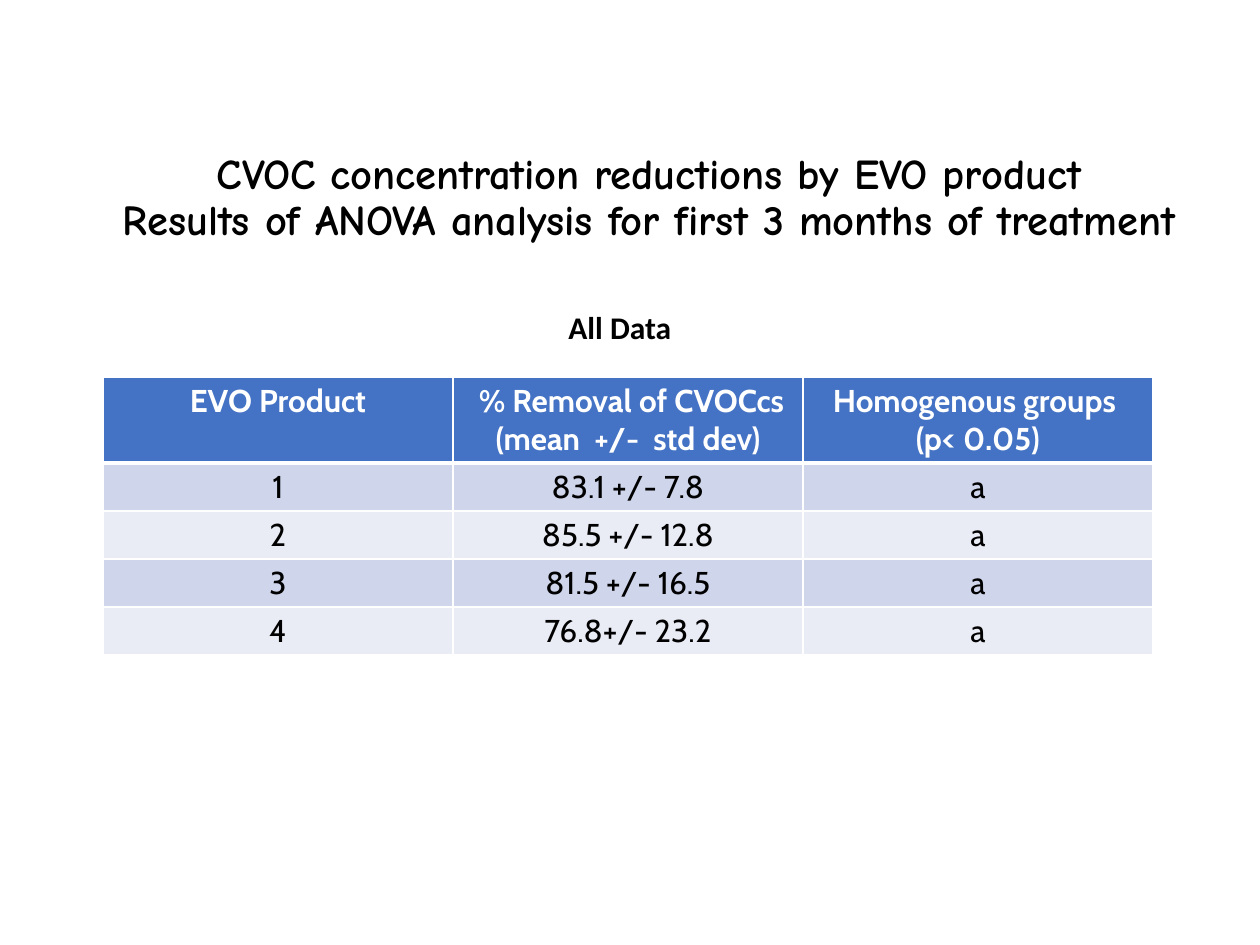
from lxml import etree
from pptx import Presentation, util as u
from pptx.dml.color import RGBColor
from pptx.enum import text
from pptx.oxml.ns import qn

SCALE = 914400 / 126  # EMU in one px

TITLE = ("CVOC concentration reductions by EVO product\v"
         "Results of ANOVA analysis for first 3 months of treatment")
ROWS = [
    ["EVO Product", " % Removal of CVOCcs (mean  +/-  std dev)",
     "Homogenous groups \n(p< 0.05)"],
    ["1", "83.1 +/- 7.8", "a"],
    ["2", "85.5 +/- 12.8", "a"],
    ["3", "81.5 +/- 16.5", "a"],
    ["4", "76.8+/- 23.2", "a"],
]
HEAD_FILL, BANDS = "4472C4", ["CFD5EA", "E9EBF5"]
COL_W, HEAD_H, ROW_H = 350, 86, 48

HEAD = {"name": "Cabin", "size": u.Pt(18), "bold": True}
BODY = {**HEAD, "bold": False}
BIG = {"name": "Comic Neue", "size": u.Pt(24.3), "bold": True}
LABEL = {**HEAD, "name": "Calibri"}


def px(*vals):
    return [u.Emu(round(v * SCALE)) for v in vals]


def color(code):
    return RGBColor.from_string(code)


def write(frame, words, font, ink, **para):
    """Fill a text frame and format its paragraphs and runs."""
    frame.text = words
    for par in frame.paragraphs:
        for key, val in para.items():
            setattr(par, key, val)
        for run in par.runs:
            for key, val in font.items():
                setattr(run.font, key, val)
            run.font.color.rgb = color(ink)


def add_text(slide, box, words, font, wrap=True, **para):
    frame = slide.shapes.add_textbox(*px(*box)).text_frame
    frame.word_wrap = wrap
    frame.vertical_anchor = text.MSO_ANCHOR.MIDDLE
    write(frame, words, font, "000000", **para)


def add_edges(cell, low):
    """Draw white cell borders; low is the bottom width in points."""
    props = cell._tc.get_or_add_tcPr()
    for side, wide in (("L", 1), ("R", 1), ("T", 1), ("B", low)):
        line = etree.SubElement(props, qn("a:ln" + side), w=str(u.Pt(wide)))
        fill = etree.SubElement(line, qn("a:solidFill"))
        etree.SubElement(fill, qn("a:srgbClr"), val="FFFFFF")


def add_grid(slide, left, top):
    count, cols = len(ROWS), len(ROWS[0])
    size = (COL_W * cols, HEAD_H + ROW_H * (count - 1))
    table = slide.shapes.add_table(count, cols, *px(left, top, *size)).table
    for col in table.columns:
        col.width = px(COL_W)[0]
    pad = dict(margin_left=u.Inches(0.07), margin_right=u.Inches(0.07),
               margin_top=u.Inches(0.04), margin_bottom=u.Inches(0.04))
    for r, row in enumerate(ROWS):
        head = r == 0
        table.rows[r].height = px(HEAD_H if head else ROW_H)[0]
        for c, words in enumerate(row):
            cell = table.cell(r, c)
            for key, val in pad.items():
                setattr(cell, key, val)
            # The rule under the header is shared with the first body row
            add_edges(cell, 3 if head else 1)
            cell.fill.solid()
            cell.fill.fore_color.rgb = color(
                HEAD_FILL if head else BANDS[(r - 1) % 2])
            write(cell.text_frame, words, HEAD if head else BODY,
                  "FFFFFF" if head else "000000",
                  alignment=text.PP_ALIGN.CENTER)


def main():
    deck = Presentation()
    deck.slide_width, deck.slide_height = px(1260, 945)
    slide = deck.slides.add_slide(deck.slide_layouts[6])

    # Title
    add_text(slide, (57, 130, 1184, 137), TITLE, BIG,
             alignment=text.PP_ALIGN.CENTER, line_spacing=0.9)
    # Results table and its label
    add_grid(slide, 103, 377)
    add_text(slide, (556, 302, 130, 50), "All Data", LABEL, wrap=False)

    deck.save("out.pptx")


if __name__ == "__main__":
    main()
